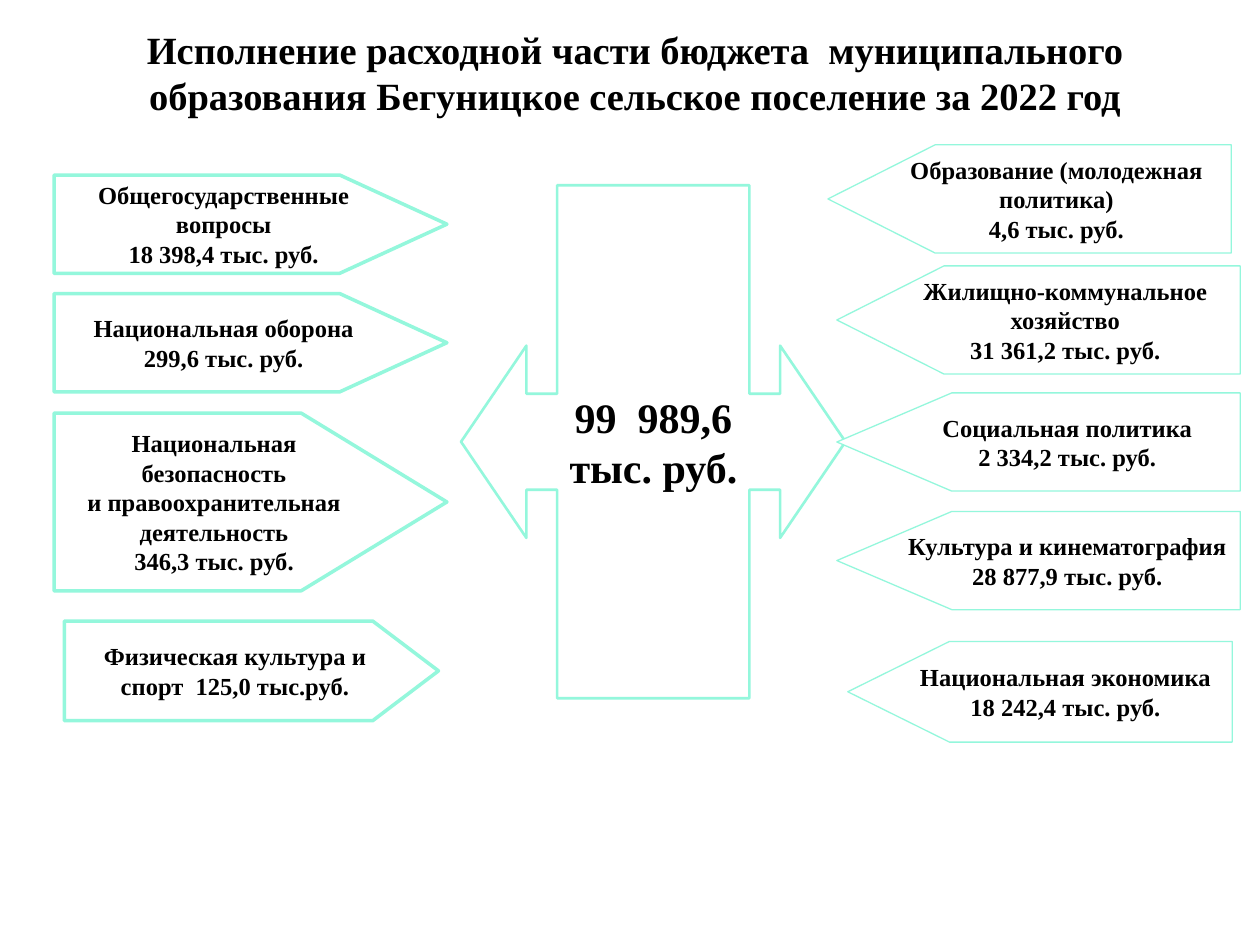
from pptx import Presentation
from pptx.dml.color import RGBColor
from pptx.enum.shapes import MSO_SHAPE as Shape
from pptx.enum.text import MSO_ANCHOR as Anchor, MSO_AUTO_SIZE as AutoSize, PP_ALIGN as Align
from pptx.oxml.ns import qn
from pptx.util import Cm, Pt

COLORS = {"text": "000000", "fill": "FFFFFF", "outline": "94F7DC"}
FONT = "Times New Roman"


def write_lines(text_frame, lines, size):
    """Write one centred bold paragraph for each line."""
    for index, line in enumerate(lines):
        paragraph = text_frame.add_paragraph() if index else text_frame.paragraphs[0]
        paragraph.alignment = Align.CENTER
        run = paragraph.add_run()
        run.text = line
        run.font.name = FONT
        run.font.size = Pt(size)
        run.font.bold = True
        run.font.color.rgb = RGBColor.from_string(COLORS["text"])


def add_block(kind, box, adjustments, line_width, lines, size, wrap=True):
    """Add an outlined shape with centred text."""
    shape = slide.shapes.add_shape(kind, *(Cm(length) for length in box))
    shape.shadow.inherit = False
    for index, value in enumerate(adjustments):
        shape.adjustments[index] = value
    shape.fill.solid()
    shape.fill.fore_color.rgb = RGBColor.from_string(COLORS["fill"])
    shape.line.color.rgb = RGBColor.from_string(COLORS["outline"])
    shape.line.width = Pt(line_width)
    shape.text_frame.word_wrap = wrap
    shape.text_frame.vertical_anchor = Anchor.MIDDLE
    write_lines(shape.text_frame, lines, size)
    return shape


presentation = Presentation()
presentation.slide_width = Cm(25.4)
presentation.slide_height = Cm(19.05)
slide = presentation.slides.add_slide(presentation.slide_layouts[5])

# Title
title = slide.shapes.title
title.left, title.top, title.width, title.height = Cm(0.99), Cm(0.41), Cm(23.62), Cm(1.98)
title_frame = title.text_frame
title_frame.auto_size = AutoSize.NONE
title_frame.word_wrap = True
title_frame.vertical_anchor = Anchor.BOTTOM
title_frame.margin_left = title_frame.margin_right = title_frame.margin_bottom = 0
title_frame.margin_top = Cm(0.13)
write_lines(title_frame, ["Исполнение расходной части бюджета  муниципального образования "
                          "Бегуницкое сельское поселение за 2022 год"], 22)

# Total spending, with arrows to both sides
total = add_block(Shape.UP_DOWN_ARROW_CALLOUT, (8, 5.03, 10.34, 7.75), (0.25, 0.25, 0.17, 0.5),
                  1.5, ["99  989,6", "тыс. руб."], 24, wrap=False)
total.rotation = 270
total.element.find(".//" + qn("a:bodyPr")).set("vert", "eaVert")

# Left column: left, top, width, height, point, lines
left_items = [
    (1.09, 3.53, 7.92, 1.98, 1.09, ["Общегосударственные вопросы", "18 398,4 тыс. руб."]),
    (1.09, 5.92, 7.92, 1.98, 1.09, ["Национальная оборона", "299,6 тыс. руб."]),
    (1.09, 8.33, 7.92, 3.58, 0.82, ["Национальная безопасность",
                                    "и правоохранительная деятельность", "346,3 тыс. руб."]),
    (1.3, 12.52, 7.54, 2.01, 0.66, ["Физическая культура и спорт  125,0 тыс.руб."]),
]
for *box, point, lines in left_items:
    add_block(Shape.PENTAGON, box, [point], 2, lines, 14)

# Right column: left, top, width, height, point, wrap, lines
right_items = [
    (16.69, 2.92, 8.13, 2.18, 0.99, True, ["Образование (молодежная политика)", "4,6 тыс. руб."]),
    (16.87, 5.36, 8.13, 2.18, 0.99, True, ["Жилищно-коммунальное хозяйство", "31 361,2 тыс. руб."]),
    (16.87, 7.92, 8.13, 1.98, 1.17, False, ["Социальная политика", "2 334,2 тыс. руб."]),
    (16.87, 10.31, 8.13, 1.98, 1.17, True, ["Культура и кинематография", "28 877,9 тыс. руб."]),
    (17.09, 12.93, 7.75, 2.03, 1.01, False, ["Национальная экономика", "18 242,4 тыс. руб."]),
]
for *box, point, wrap, lines in right_items:
    block = add_block(Shape.PENTAGON, box, [point], 0.75, lines, 14, wrap)
    # The shape points left, so its text is turned back upright
    block.rotation = 180
    block.element.find(".//" + qn("a:bodyPr")).set("rot", "10800000")

presentation.save("out.pptx")
